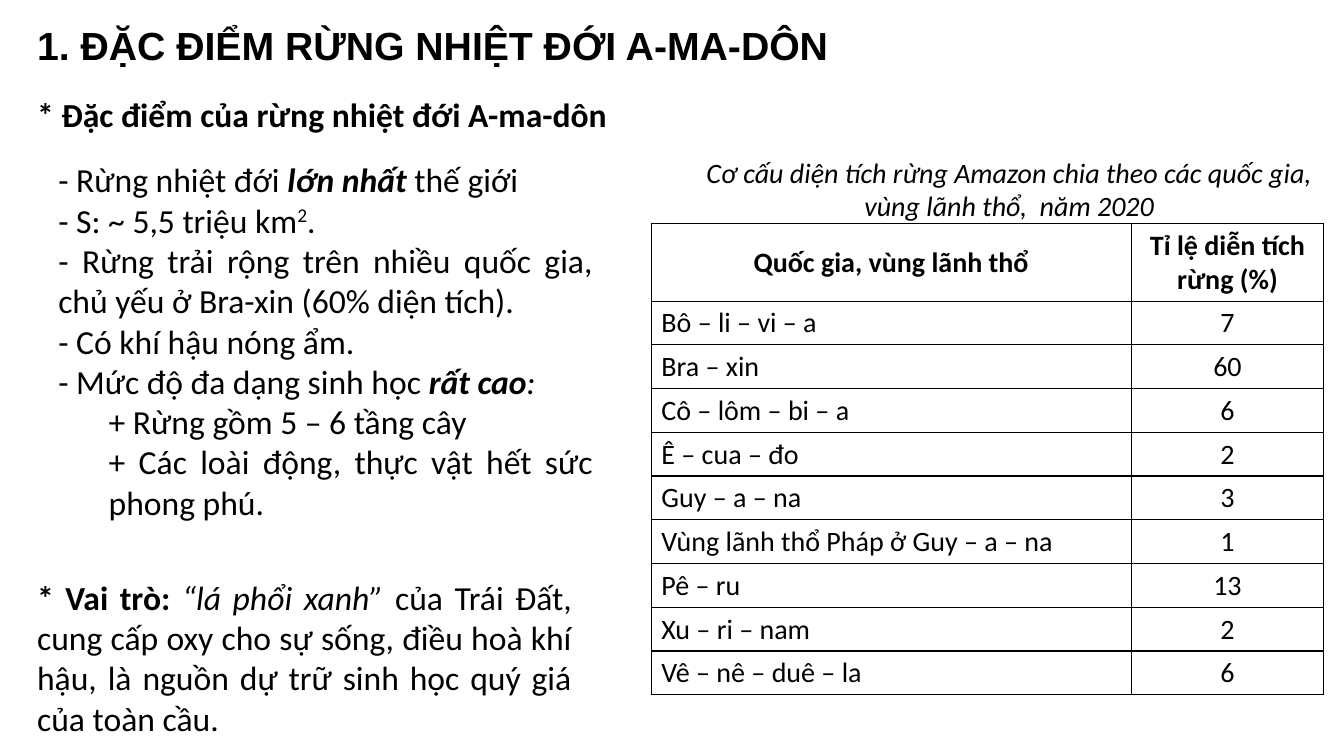
import pptx
import pptx.util
import pptx.dml.color
import pptx.enum.text
import pptx.oxml
from pptx.util import Inches

ALIGN = pptx.enum.text.PP_ALIGN
ANCHOR = pptx.enum.text.MSO_ANCHOR
INK = "000000"
A_NS = "http://schemas.openxmlformats.org/drawingml/2006/main"


def write(par, text, size=24, font="Calibri", color=INK, bold=False, italic=False, base=None):
    run = par.add_run()
    run.text = text
    run.font.size = pptx.util.Pt(size)
    run.font.name = font
    run.font.bold = bold
    run.font.italic = italic
    run.font.color.rgb = pptx.dml.color.RGBColor.from_string(color)
    if base:
        run.font._element.set("baseline", str(base * 1000))


def box(left, top, width, height, wrap=True):
    shape = slide.shapes.add_textbox(Inches(left), Inches(top), Inches(width), Inches(height))
    frame = shape.text_frame
    frame.word_wrap = wrap
    frame.auto_size = pptx.enum.text.MSO_AUTO_SIZE.SHAPE_TO_FIT_TEXT
    return frame


deck = pptx.Presentation()
deck.slide_width, deck.slide_height = Inches(13.33), Inches(7.5)
slide = deck.slides.add_slide(deck.slide_layouts[6])

# Title and heading
title = box(0.27, 0.16, 8.14, 0.57, wrap=False)
write(title.paragraphs[0], "1. ĐẶC ĐIỂM RỪNG NHIỆT ĐỚI A-MA-DÔN", size=28, font="Arial", bold=True)

head = box(0.27, 0.88, 8.84, 0.5).paragraphs[0]
head.alignment = ALIGN.JUSTIFY
write(head, "* Đặc điểm của rừng nhiệt đới A-ma-dôn", bold=True)

# Features: level, then runs with their format
strong = dict(bold=True, italic=True)
points = [
    (0, [("- Rừng nhiệt đới ", {}), ("lớn nhất", strong), (" thế giới ", {})]),
    (0, [("- S: ~ 5,5 triệu km", {}), ("2", dict(base=30)), (".", {})]),
    (0, [("- Rừng trải rộng trên nhiều quốc gia, chủ yếu ở Bra-xin (60% diện tích).", {})]),
    (0, [("- Có khí hậu nóng ẩm.", {})]),
    (0, [("- Mức độ đa dạng sinh học ", {}), ("rất cao", strong), (":", dict(italic=True))]),
    (1, [("+ Rừng gồm 5 – 6 tầng cây ", {})]),
    (1, [("+ Các loài động, thực vật hết sức phong phú.", {})]),
]
frame = box(0.48, 1.53, 5.5, 4.14)
for i, (level, runs) in enumerate(points):
    par = frame.add_paragraph() if i else frame.paragraphs[0]
    par.alignment = ALIGN.JUSTIFY
    if level:
        par.level = level
        props = par._p.get_or_add_pPr()
        props.set("marL", str(Inches(0.5)))
        props.set("indent", "0")
    for text, style in runs:
        write(par, text, **style)

# Table of forest shares
rows = [
    ("Quốc gia, vùng lãnh thổ", "Tỉ lệ diễn tích rừng (%)"),
    ("Bô – li – vi – a", "7"),
    ("Bra – xin", "60"),
    ("Cô – lôm – bi – a", "6"),
    ("Ê – cua – đo", "2"),
    ("Guy – a – na", "3"),
    ("Vùng lãnh thổ Pháp ở Guy – a – na", "1"),
    ("Pê – ru", "13"),
    ("Xu – ri – nam", "2"),
    ("Vê – nê – duê – la", "6"),
]
table = slide.shapes.add_table(len(rows), 2, Inches(6.46), Inches(2.22),
                               Inches(6.67), Inches(4.1)).table
table.first_row = table.horz_banding = False
for col, width in zip(table.columns, (4.76, 1.91)):
    col.width = Inches(width)
for r, row in enumerate(rows):
    table.rows[r].height = Inches(0.41)
    for c, text in enumerate(row):
        cell = table.cell(r, c)
        cell.vertical_anchor = ANCHOR.MIDDLE if (r, c) == (0, 0) else ANCHOR.TOP
        par = cell.text_frame.paragraphs[0]
        par.alignment = ALIGN.CENTER if r == 0 or c == 1 else ALIGN.LEFT
        write(par, text, size=20, bold=r == 0)
        # Borders go before the fill
        for side in ("lnL", "lnR", "lnT", "lnB"):
            cell._tc.get_or_add_tcPr().append(pptx.oxml.parse_xml(
                f'<a:{side} xmlns:a="{A_NS}" w="12700"><a:solidFill>'
                f'<a:srgbClr val="{INK}"/></a:solidFill></a:{side}>'))
        cell.fill.background()

# Table caption
note = box(6.67, 1.49, 6.68, 0.77).paragraphs[0]
note.alignment = ALIGN.CENTER
write(note, "Cơ cấu diện tích rừng Amazon chia theo các quốc gia, vùng lãnh thổ,  năm 2020",
      size=20, italic=True)

# Role of the forest
role = box(0.27, 5.67, 5.5, 1.72).paragraphs[0]
role.alignment = ALIGN.JUSTIFY
write(role, "* Vai trò: ", bold=True)
write(role, "“lá phổi xanh” ", italic=True)
write(role, "của Trái Đất, cung cấp oxy cho sự sống, điều hoà khí hậu, "
            "là nguồn dự trữ sinh học quý giá của toàn cầu.")

deck.save("out.pptx")
